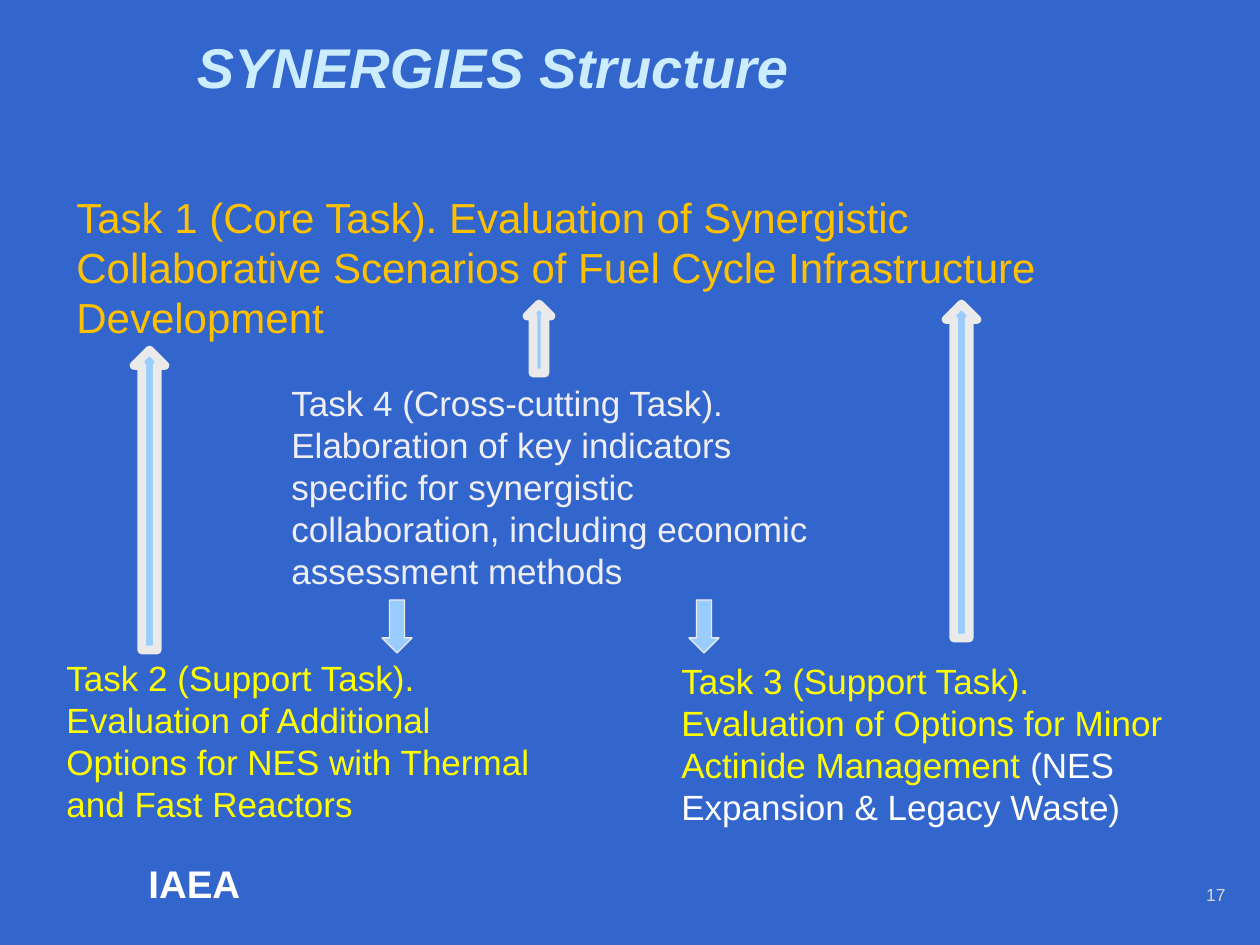
from pptx import Presentation
from pptx.dml.color import RGBColor
from pptx.enum.shapes import MSO_SHAPE
from pptx.enum.text import MSO_ANCHOR, PP_ALIGN
from pptx.util import Emu, Pt

EMU_PER_PX = 914400 / 126

BLUE = RGBColor(0x33, 0x66, 0xCC)
PALE_BLUE = RGBColor(0xCC, 0xEC, 0xFF)
SKY = RGBColor(0x99, 0xCC, 0xFF)
LIGHT_GREY = RGBColor(0xEA, 0xEA, 0xEA)
NUMBER_GREY = RGBColor(0xD5, 0xD7, 0xD8)
OFF_WHITE = RGBColor(0xEE, 0xEE, 0xF4)
WHITE = RGBColor(0xFF, 0xFF, 0xFF)
YELLOW = RGBColor(0xFF, 0xFF, 0x00)
AMBER = RGBColor(0xFF, 0xC0, 0x00)


def px(*lengths):
    return [Emu(round(length * EMU_PER_PX)) for length in lengths]


def add_run(paragraph, text, color, **font_format):
    run = paragraph.add_run()
    run.text = text
    run.font.name = "Arial"
    run.font.color.rgb = color
    for name, value in font_format.items():
        setattr(run.font, name, value)


presentation = Presentation()
presentation.slide_width, presentation.slide_height = px(1260, 945)
slide = presentation.slides.add_slide(presentation.slide_layouts[5])
slide.background.fill.solid()
slide.background.fill.fore_color.rgb = BLUE

# Title
title = slide.shapes.title
title.left, title.top, title.width, title.height = px(39, 14, 908, 105)
title.text_frame.vertical_anchor = MSO_ANCHOR.MIDDLE
title_paragraph = title.text_frame.paragraphs[0]
title_paragraph.alignment = PP_ALIGN.CENTER
add_run(title_paragraph, "SYNERGIES Structure", PALE_BLUE,
        size=Pt(32), bold=True, italic=True)

# Tasks, footer and slide number: box, alignment, font format, runs
LEFT, RIGHT = PP_ALIGN.LEFT, PP_ALIGN.RIGHT
texts = [
    ((136, 854, 126, 59), LEFT, {"size": Pt(22), "bold": True}, [("IAEA", WHITE)]),
    ((1168, 878, 70, 40), RIGHT, {"size": Pt(10)}, [("17", NUMBER_GREY)]),
    ((64, 185, 1081, 165), LEFT, {"size": Pt(24)}, [
        ("Task 1 (Core Task). Evaluation of Synergistic Collaborative "
         "Scenarios of Fuel Cycle Infrastructure Development", AMBER)]),
    ((54, 650, 496, 183), LEFT, {"size": Pt(20)}, [
        ("Task 2 (Support Task). Evaluation of Additional Options for NES "
         "with Thermal and Fast Reactors", YELLOW)]),
    ((669, 653, 507, 183), LEFT, {"size": Pt(20)}, [
        ("Task 3 (Support Task). Evaluation of Options for Minor Actinide "
         "Management ", YELLOW),
        ("(NES Expansion & Legacy Waste)", WHITE)]),
    ((279, 375, 586, 224), LEFT, {"size": Pt(20)}, [
        ("Task 4 (Cross-cutting Task). Elaboration of key indicators specific "
         "for synergistic collaboration, including economic assessment methods",
         OFF_WHITE)]),
]
for box, alignment, font_format, runs in texts:
    text_box = slide.shapes.add_textbox(*px(*box))
    text_box.text_frame.word_wrap = True
    paragraph = text_box.text_frame.paragraphs[0]
    paragraph.alignment = alignment
    for text, color in runs:
        add_run(paragraph, text, color, **font_format)

# Arrows between the tasks
UP, DOWN = MSO_SHAPE.UP_ARROW, MSO_SHAPE.DOWN_ARROW
arrows = [
    (UP, (527, 304, 24, 69), 5),
    (DOWN, (382, 600, 30, 53), 0.75),
    (DOWN, (689, 600, 30, 53), 0.75),
    (UP, (134, 350, 31, 300), 5),
    (UP, (946, 304, 31, 334), 5),
]
for kind, box, line_width in arrows:
    arrow = slide.shapes.add_shape(kind, *px(*box))
    arrow.shadow.inherit = False
    arrow.fill.solid()
    arrow.fill.fore_color.rgb = SKY
    arrow.line.color.rgb = LIGHT_GREY
    arrow.line.width = Pt(line_width)

presentation.save("out.pptx")
